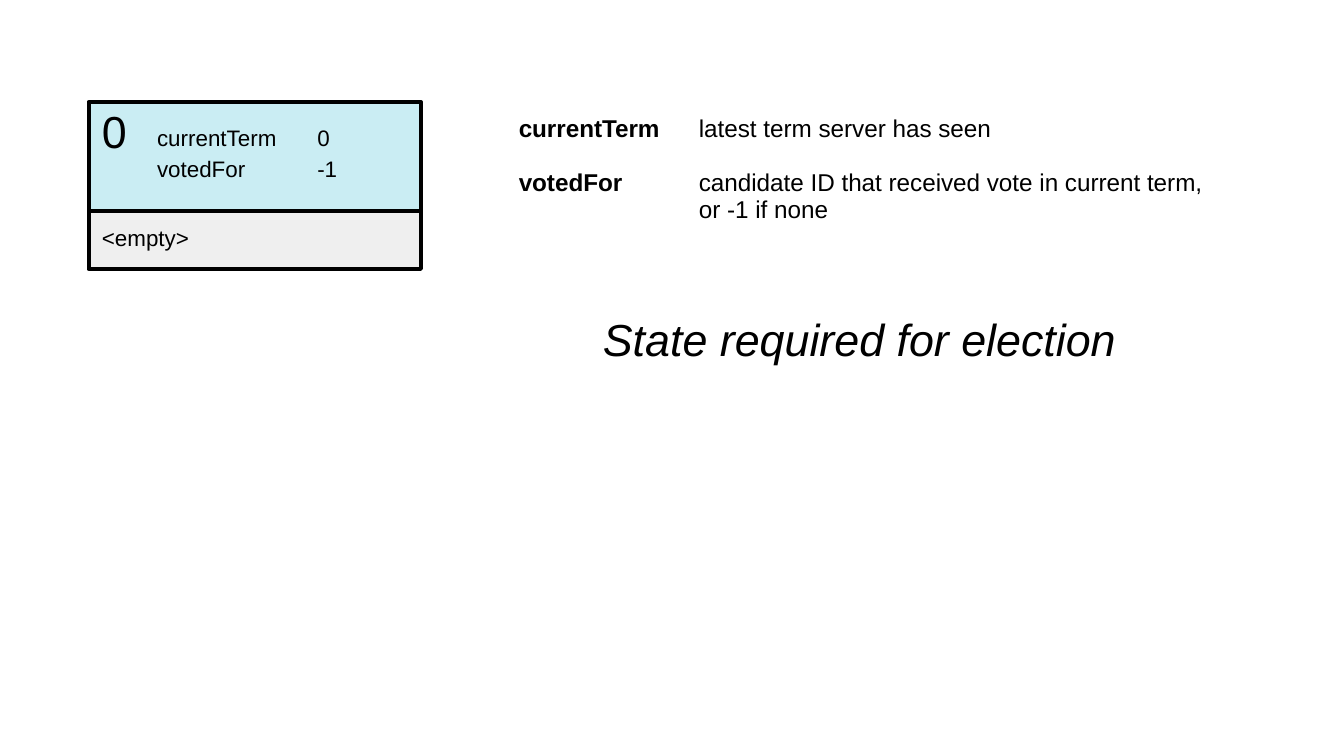
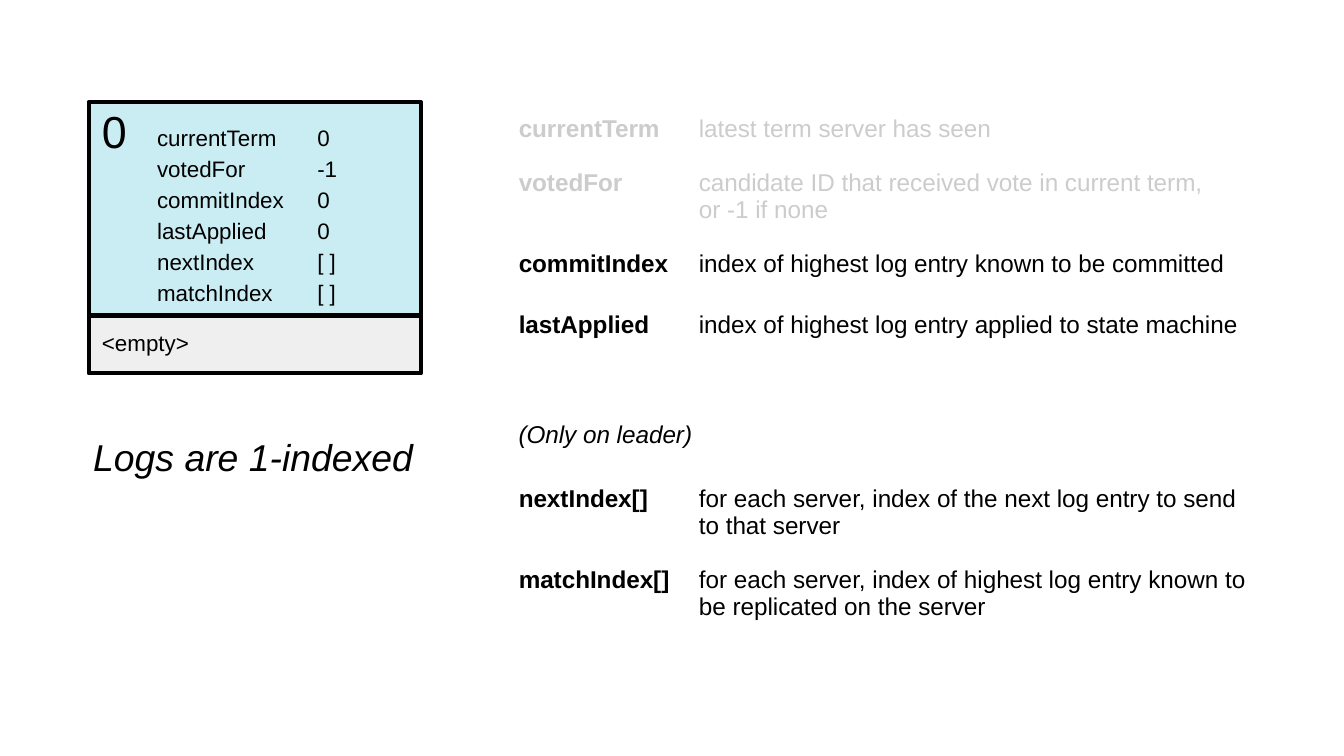
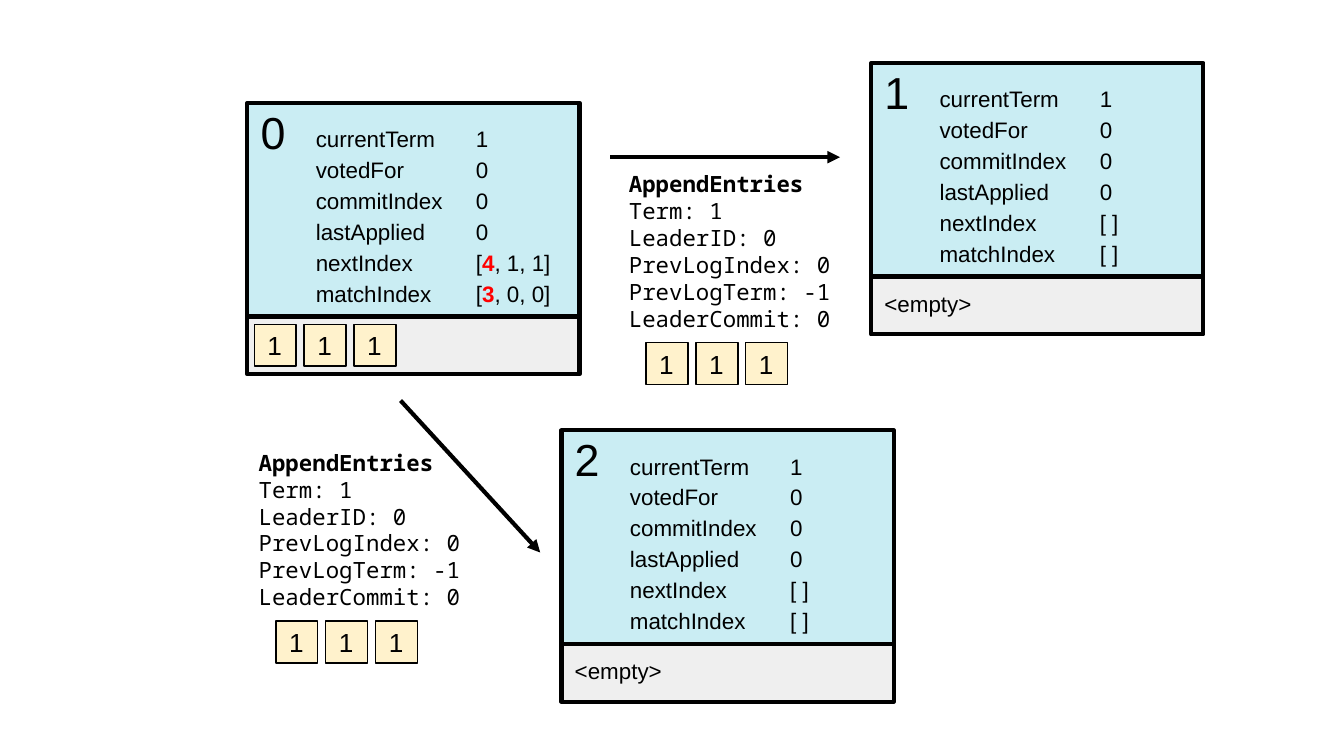
import collections
import lxml.etree
import pptx
import pptx.dml.color
import pptx.enum.shapes
import pptx.enum.text
import pptx.oxml.ns
import pptx.util

Pt = pptx.util.Pt
RGBColor = pptx.dml.color.RGBColor
Anchor = pptx.enum.text.MSO_ANCHOR
Align = pptx.enum.text.PP_ALIGN
qn = pptx.oxml.ns.qn
Box = collections.namedtuple("Box", "left top width height")

BLACK = RGBColor(0x00, 0x00, 0x00)
WHITE = RGBColor(0xFF, 0xFF, 0xFF)
RED = RGBColor(0xFF, 0x00, 0x00)
FADED = RGBColor(0xCC, 0xCC, 0xCC)
AQUA = RGBColor(0xCA, 0xED, 0xF3)
GRAY = RGBColor(0xEF, 0xEF, 0xEF)
CREAM = RGBColor(0xFF, 0xF2, 0xCC)

SANS, MONO = "Arial", "Noto Sans Mono"
PAD = {"margin_" + side: Pt(7.2) for side in ("left", "top", "right", "bottom")}
PLAIN = {"first_row": False, "horz_banding": False}
WIDE, THIN = 2.25, 0.75
SERVER = 178
LOG = 31

FIELDS = ["currentTerm", "votedFor", "commitIndex", "lastApplied", "nextIndex", "matchIndex"]
START = ["0", "-1", "0", "0", "[ ]", "[ ]"]
PEER = ["1", "0", "0", "0", "[ ]", "[ ]"]
HOT = {"bold": True, "color": RED}
LEADER = ["1", "0", "0", "0",
          ["[", ("4", HOT), ", 1, 1]"],
          ["[", ("3", HOT), ", 0, 0]"]]
CALL = [[("AppendEntries", {"bold": True})], "Term: 1", "LeaderID: 0",
        "PrevLogIndex: 0", "PrevLogTerm: -1", "LeaderCommit: 0"]
VOTE = [("currentTerm", ["latest term server has seen"], 21.6),
        ("votedFor", ["candidate ID that received vote in current term,",
                      "or -1 if none"], 32.4)]
COMMIT = [("commitIndex", ["index of highest log entry known to be committed"], 32.4),
          ("lastApplied", ["index of highest log entry applied to state machine"], 32.4)]
INDEX = [("nextIndex[]", ["for each server, index of the next log entry to send to that server"], 32.4),
         ("matchIndex[]", ["for each server, index of highest log entry known to be replicated on the server"], 42.5)]


def put(thing, values):
    for name, value in values.items():
        setattr(thing, name, value)


def write(frame, lines, size, space=1.0, align=Align.LEFT, **base):
    for i, line in enumerate(lines):
        para = frame.paragraphs[0] if i == 0 else frame.add_paragraph()
        put(para, {"alignment": align, "line_spacing": space, "space_before": Pt(0)})
        for part in [line] if isinstance(line, str) else line:
            text, extra = (part, {}) if isinstance(part, str) else part
            style = {"name": SANS, "size": Pt(size), "bold": False, "color": BLACK, **base, **extra}
            tint = style.pop("color")
            run = para.add_run()
            run.text = text
            put(run.font, style)
            run.font.color.rgb = tint


def frame(shape, anchor=Anchor.TOP):
    text = shape.text_frame
    put(text, {**PAD, "word_wrap": True, "vertical_anchor": anchor,
               "auto_size": pptx.enum.text.MSO_AUTO_SIZE.NONE})
    return text


def label(shapes, box, lines, size, anchor=Anchor.TOP, **style):
    shape = shapes.add_textbox(*map(Pt, box))
    write(frame(shape, anchor), lines, size, **style)


def block(shapes, box, fill, weight, lines=(), size=12, anchor=Anchor.TOP):
    shape = shapes.add_shape(pptx.enum.shapes.MSO_SHAPE.RECTANGLE, *map(Pt, box))
    shape.shadow.inherit = False
    shape.fill.solid()
    shape.fill.fore_color.rgb = fill
    shape.line.color.rgb = BLACK
    shape.line.width = Pt(weight)
    write(frame(shape, anchor), lines, size)


def server(slide, box, name, values, log=("<empty>",)):
    left, top, width, height = box
    count = len(values)
    shapes = slide.shapes.add_group_shape().shapes
    base = top + height - LOG
    tall = 21.5 + 14.2 * count + 0.5 * (count > 2)
    block(shapes, Box(left, top, width, height - LOG), AQUA, WIDE)
    label(shapes, Box(left + 29.6, top + 2.6, 92, tall), FIELDS[:count], 12, space=1.15)
    block(shapes, Box(left, base, width, LOG), GRAY, WIDE, log)
    label(shapes, Box(left, top - 6.4, 51, 42.5), [name], 24)
    label(shapes, Box(left + 115.4, top + 2.6, 55.4, tall), values, 12, space=1.15)


def entries(shapes, box):
    for i in range(3):
        cell = Box(box.left + i * 26.7, box.top, box.height, box.height)
        block(shapes, cell, CREAM, THIN, ["1"], 14, Anchor.MIDDLE)


def message(slide, box, start, end):
    shapes = slide.shapes.add_group_shape().shapes
    arrow = shapes.add_connector(pptx.enum.shapes.MSO_CONNECTOR.STRAIGHT, *map(Pt, start + end))
    arrow.line.color.rgb = BLACK
    arrow.line.width = Pt(WIDE)
    props = arrow.element.spPr
    lxml.etree.SubElement(props.find(qn("a:ln")), qn("a:tailEnd"), type="triangle")
    lxml.etree.SubElement(props, qn("a:effectLst"))
    label(shapes, box, CALL, 12, name=MONO)
    entries(shapes, Box(box.left + 16.3, box.top + box.height, 76, 22.5))


def edge(cell):
    props = cell._tc.get_or_add_tcPr()
    for side in "LRTB":
        line = lxml.etree.SubElement(props, qn("a:ln" + side), w=str(Pt(1.5)))
        fill = lxml.etree.SubElement(line, qn("a:solidFill"))
        lxml.etree.SubElement(fill, qn("a:srgbClr"), val=str(WHITE))


def facts(slide, box, rows, faded=0):
    table = slide.shapes.add_table(len(rows), 2, *map(Pt, box)).table
    put(table, PLAIN)
    key = 96.5
    table.columns[0].width = Pt(key)
    table.columns[1].width = Pt(box.width - key)
    for i, (term, text, height) in enumerate(rows):
        table.rows[i].height = Pt(height)
        tint = FADED if i < faded else BLACK
        for j, lines in enumerate(([term], text)):
            cell = table.cell(i, j)
            edge(cell)
            cell.fill.background()
            put(cell, PAD)
            write(cell.text_frame, lines, 13, bold=j == 0, color=tint)


def note(slide, box, text, size):
    body = slide.placeholders[1]
    put(body, dict(zip(box._fields, map(Pt, box))))
    write(frame(body), [text], size, align=Align.CENTER, italic=True)


def page(deck, layout):
    slide = deck.slides.add_slide(deck.slide_layouts[layout])
    title = slide.shapes.title
    if title is not None:
        title.element.getparent().remove(title.element)
    return slide


def vote(deck):
    slide = page(deck, 2)
    server(slide, Box(47.5, 54.7, SERVER, 89.4), "0", START[:2])
    facts(slide, Box(270.7, 54.7, 411, 54), VOTE)
    note(slide, Box(284.4, 160, 352, 41), "State required for election", 24)


def state(deck):
    slide = page(deck, 2)
    server(slide, Box(47.5, 54.7, SERVER, 145.4), "0", START)
    facts(slide, Box(270.7, 54.7, 411, 118.8), VOTE + COMMIT, faded=2)
    facts(slide, Box(270.7, 252.7, 411, 75), INDEX)
    label(slide.shapes, Box(270.7, 217.4, 114.5, 27.4), ["(Only on leader)"], 13,
          Anchor.MIDDLE, space=1.15, italic=True)
    note(slide, Box(23, 225.4, 225.4, 41), "Logs are 1-indexed", 20)


def append(deck):
    slide = page(deck, 6)
    server(slide, Box(132.5, 55.2, SERVER, 145.4), "0", LEADER, log=())
    server(slide, Box(466.7, 33.8, SERVER, 145.4), "1", PEER)
    server(slide, Box(300.8, 230.6, SERVER, 145.4), "2", PEER)
    entries(slide.shapes, Box(136.2, 173.7, 76, 22.5))
    message(slide, Box(329.8, 84.2, 139, 99.4), (327, 84.2), (450, 84.2))
    message(slide, Box(131.5, 233.3, 139, 99.4), (214.6, 214.6), (289.4, 296))


def main():
    deck = pptx.Presentation()
    put(deck, {"slide_width": Pt(720), "slide_height": Pt(405)})
    for build in (vote, state, append):
        build(deck)
    deck.save("out.pptx")


if __name__ == "__main__":
    main()
